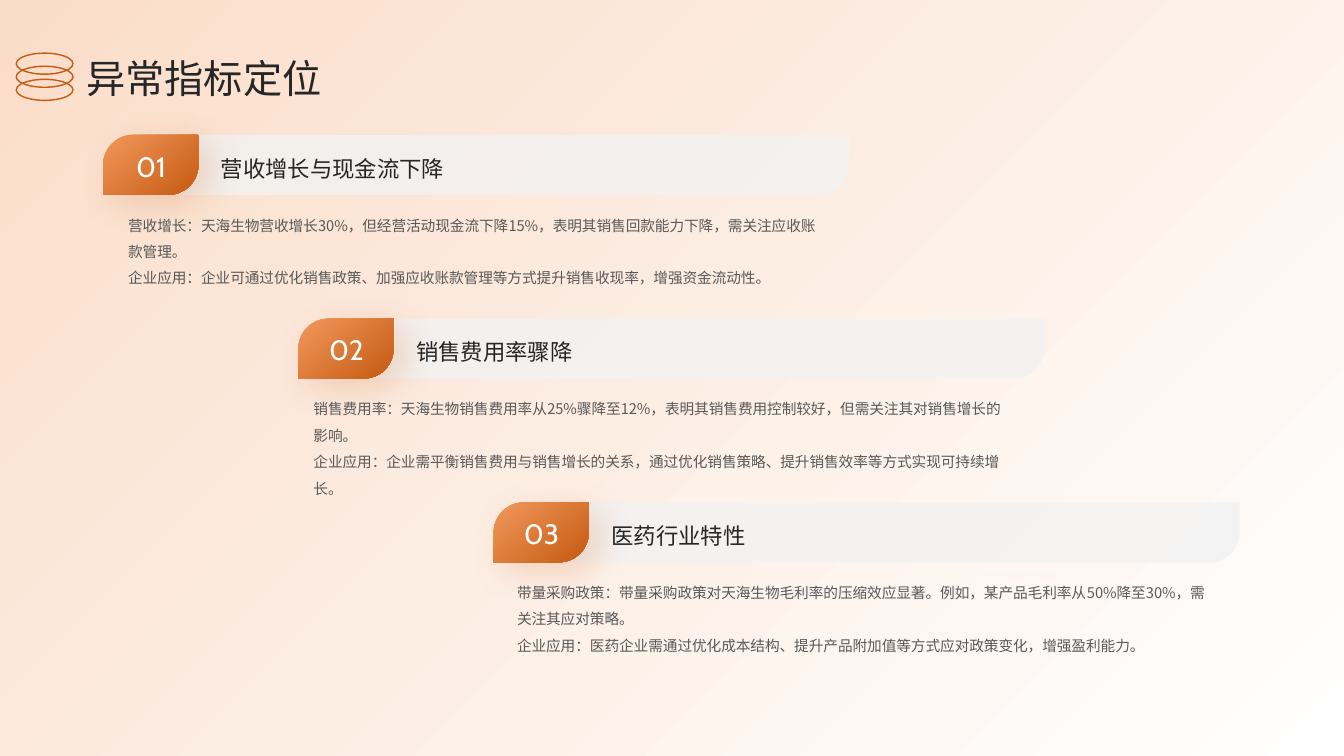
from lxml import etree
from pptx import Presentation
from pptx.dml.color import RGBColor
from pptx.enum.shapes import MSO_SHAPE
from pptx.enum.text import MSO_ANCHOR, MSO_AUTO_SIZE, PP_ALIGN
from pptx.oxml.ns import qn
from pptx.util import Cm, Pt

OVAL = MSO_SHAPE.OVAL
LEAF = MSO_SHAPE.ROUND_2_DIAG_RECTANGLE
TOP, MIDDLE = MSO_ANCHOR.TOP, MSO_ANCHOR.MIDDLE
LEFT, CENTER = PP_ALIGN.LEFT, PP_ALIGN.CENTER
NO_AUTOFIT = MSO_AUTO_SIZE.NONE

COLORS = {
    "white": "FFFFFF",
    "peach": "FADDC9",
    "light_orange": "F1985C",
    "orange": "C55A11",
    "bar": "F2F2F2",
    "heading": "262626",
    "body": "595959",
}
CHINESE_FONT = "Noto Sans CJK SC"
NUMBER_FONT = "Cabin"

FIRST_LEFT, FIRST_TOP = 2.6, 3.4
STEP_RIGHT, STEP_DOWN = 4.92, 4.63
CARD_HEIGHT = 1.51

FINDINGS = [
    ("营收增长与现金流下降", 3.23,
     "营收增长：天海生物营收增长30%，但经营活动现金流下降15%，表明其销售回款能力下降，需关注应收账款管理。",
     "企业应用：企业可通过优化销售政策、加强应收账款管理等方式提升销售收现率，增强资金流动性。"),
    ("销售费用率骤降", 7.9,
     "销售费用率：天海生物销售费用率从25%骤降至12%，表明其销售费用控制较好，但需关注其对销售增长的影响。",
     "企业应用：企业需平衡销售费用与销售增长的关系，通过优化销售策略、提升销售效率等方式实现可持续增长。"),
    ("医药行业特性", 13.03,
     "带量采购政策：带量采购政策对天海生物毛利率的压缩效应显著。例如，某产品毛利率从50%降至30%，需关注其应对策略。",
     "企业应用：医药企业需通过优化成本结构、提升产品附加值等方式应对政策变化，增强盈利能力。"),
]


def color(name):
    """Return the named palette colour."""
    return RGBColor.from_string(COLORS[name])


def fill_gradient(fill, stops, angle):
    """Apply a two-stop linear gradient at a counter-clockwise angle."""
    fill.gradient()
    fill.gradient_angle = angle
    for stop, (position, name) in zip(fill.gradient_stops, stops):
        stop.position = position
        stop.color.rgb = color(name)


def add_alpha(color_element, percent):
    """Set the opacity of a colour element."""
    alpha = etree.SubElement(color_element, qn("a:alpha"))
    alpha.set("val", str(percent * 1000))


def add_glow_shadow(shape):
    """Give the shape a soft orange shadow to the lower right."""
    effects = shape.element.spPr.find(qn("a:effectLst"))
    shadow = etree.SubElement(effects, qn("a:outerShdw"))
    shadow.set("blurRad", str(Pt(25)))
    shadow.set("dist", str(Pt(10)))
    shadow.set("dir", str(40 * 60000))
    shadow.set("algn", "tl")
    shadow.set("rotWithShape", "0")
    shadow_color = etree.SubElement(shadow, qn("a:srgbClr"))
    shadow_color.set("val", COLORS["orange"])
    add_alpha(shadow_color, 20)


def add_leaf(slide, left, top, width):
    """Add a borderless card with two opposite rounded corners."""
    shape = slide.shapes.add_shape(
        LEAF, Cm(left), Cm(top), Cm(width), Cm(CARD_HEIGHT))
    shape.adjustments[0] = 0.5
    shape.adjustments[1] = 0
    shape.line.fill.background()
    shape.shadow.inherit = False
    return shape


def add_bar(slide, left, top):
    """Add the translucent bar behind a heading."""
    bar = add_leaf(slide, left, top, 18)
    bar.fill.solid()
    bar.fill.fore_color.rgb = color("bar")
    add_alpha(bar.element.spPr.find(qn("a:solidFill"))[0], 80)


def add_badge(slide, left, top):
    """Add the orange badge behind a number."""
    badge = add_leaf(slide, left, top, 2.4)
    fill_gradient(
        badge.fill, [(0.01, "light_orange"), (1, "orange")], 310)
    add_glow_shadow(badge)


def format_text(shape, text, size, color_name, spacing, font=CHINESE_FONT,
                anchor=MIDDLE, alignment=LEFT):
    """Write one paragraph without insets and style its runs."""
    frame = shape.text_frame
    frame.word_wrap = True
    frame.auto_size = NO_AUTOFIT
    frame.vertical_anchor = anchor
    frame.margin_left = frame.margin_right = 0
    frame.margin_top = frame.margin_bottom = 0
    paragraph = frame.paragraphs[0]
    paragraph.text = text
    paragraph.alignment = alignment
    paragraph.line_spacing = spacing
    for run in paragraph.runs:
        run.font.size = Pt(size)
        run.font.name = font
        run.font.color.rgb = color(color_name)
        east_asian = etree.SubElement(run.font._element, qn("a:ea"))
        east_asian.set("typeface", font)


def add_text(slide, left, top, width, height, *content, **style):
    """Add a formatted text box."""
    box = slide.shapes.add_textbox(
        Cm(left), Cm(top), Cm(width), Cm(height))
    format_text(box, *content, **style)


def add_finding(slide, index, heading, body_left, finding, application):
    """Add one numbered finding on the descending staircase."""
    left = FIRST_LEFT + index * STEP_RIGHT
    top = FIRST_TOP + index * STEP_DOWN
    add_bar(slide, left + 0.8, top)
    add_badge(slide, left, top)
    add_text(slide, body_left, top + 1.83, 17.5, 2.31,
             f"{finding}\v{application}", 10.5, "body", 1.5, anchor=TOP)
    add_text(slide, left + 2.97, top + 0.24, 15, 1,
             heading, 16, "heading", 1.3)
    add_text(slide, left + 0.46, top + 0.24, 1.5, 1, f"{index + 1:02}",
             20, "white", 1.1, font=NUMBER_FONT, alignment=CENTER)


def add_title(slide, text):
    """Place and format the slide title."""
    title = slide.shapes.title
    title.left, title.top = Cm(2.18), Cm(1.24)
    title.width, title.height = Cm(29.64), Cm(1.3)
    format_text(title, text, 28, "heading", 1.1)


def add_rings(slide):
    """Add the stack of three outlined rings beside the title."""
    group = slide.shapes.add_group_shape()
    for index in range(3):
        ring = group.shapes.add_shape(
            OVAL, Cm(0.41), Cm(2 - index * 0.33), Cm(1.43), Cm(0.53))
        ring.fill.background()
        ring.line.color.rgb = color("orange")
        ring.line.width = Pt(1)
        ring.shadow.inherit = False


def main():
    """Build and save the slide."""
    presentation = Presentation()
    presentation.slide_width = Cm(33.87)
    presentation.slide_height = Cm(19.05)
    slide = presentation.slides.add_slide(presentation.slide_layouts[5])
    fill_gradient(
        slide.background.fill, [(0, "white"), (1, "peach")], 135)
    add_title(slide, "异常指标定位")
    for index, finding in enumerate(FINDINGS):
        add_finding(slide, index, *finding)
    add_rings(slide)
    presentation.save("out.pptx")


if __name__ == "__main__":
    main()
